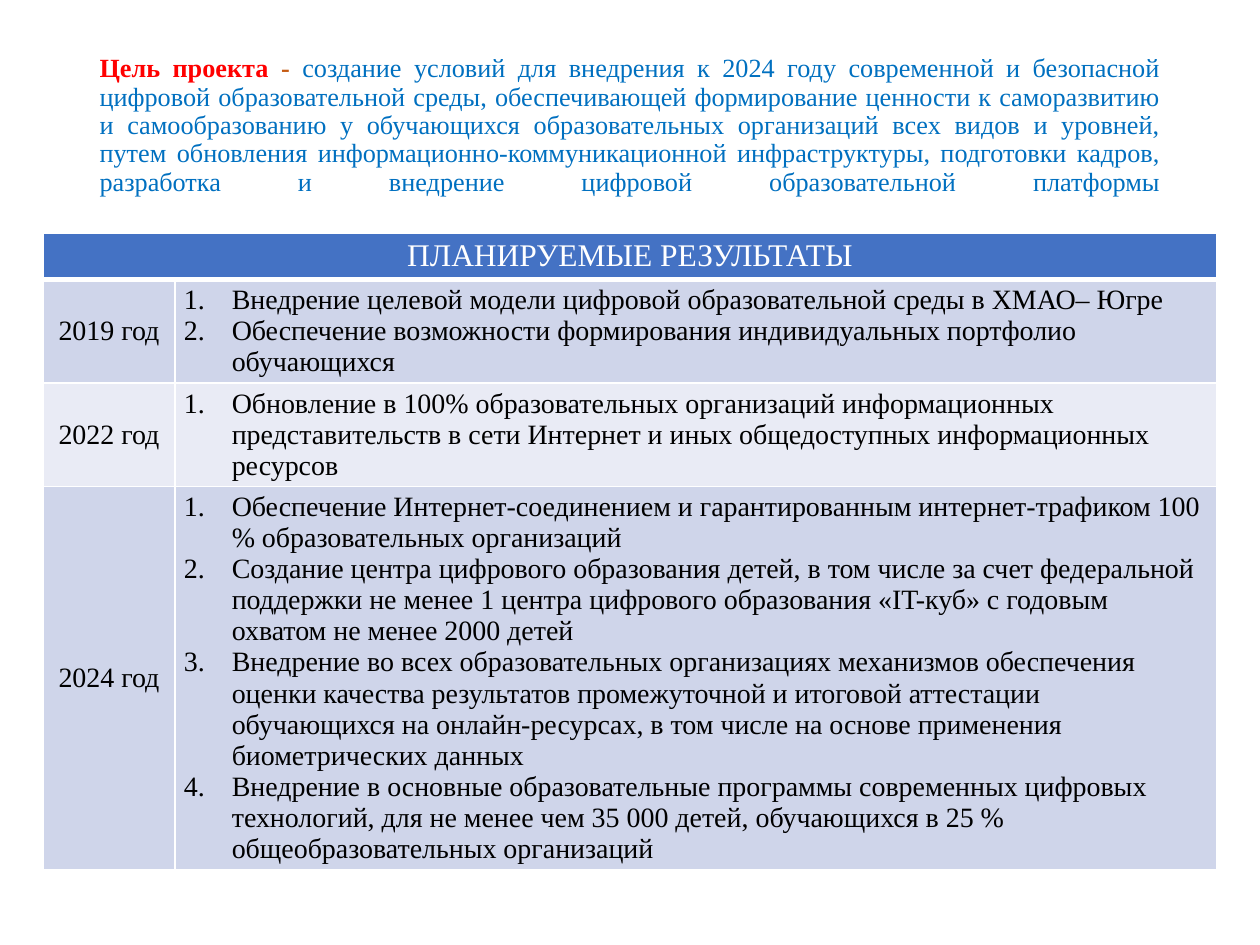
"""Build a slide with the project goal and a table of planned results by year."""
from pptx import Presentation
from pptx.dml.color import RGBColor
from pptx.enum.text import MSO_ANCHOR, MSO_AUTO_SIZE, PP_ALIGN
from pptx.oxml import parse_xml
from pptx.oxml.ns import nsdecls
from pptx.util import Inches, Pt

CENTER, LEFT, JUSTIFY = PP_ALIGN.CENTER, PP_ALIGN.LEFT, PP_ALIGN.JUSTIFY
TOP, MIDDLE = MSO_ANCHOR.TOP, MSO_ANCHOR.MIDDLE
NO_FIT = MSO_AUTO_SIZE.NONE

FONT = "Times New Roman"
RED = RGBColor(0xFF, 0x00, 0x00)
RUST = RGBColor(0xC5, 0x5A, 0x11)
BLUE = RGBColor(0x00, 0x70, 0xC0)
WHITE = RGBColor(0xFF, 0xFF, 0xFF)
BLACK = RGBColor(0x00, 0x00, 0x00)
HEAD = RGBColor(0x44, 0x72, 0xC4)
BANDS = RGBColor(0xCF, 0xD5, 0xEA), RGBColor(0xE9, 0xEB, 0xF5)

GOAL = [
    ("Цель проекта ", RED, True),
    ("- ", RUST, True),
    ("создание условий для внедрения к 2024 году современной и безопасной "
     "цифровой образовательной среды, обеспечивающей формирование ценности "
     "к саморазвитию и самообразованию у обучающихся образовательных "
     "организаций всех видов и уровней, путем обновления "
     "информационно-коммуникационной инфраструктуры, подготовки кадров, "
     "разработка и внедрение цифровой образовательной платформы", BLUE, False),
]
HEADING = "ПЛАНИРУЕМЫЕ РЕЗУЛЬТАТЫ"
RESULTS = [
    ("2019 год", [
        "Внедрение целевой модели цифровой образовательной среды в ХМАО– Югре",
        "Обеспечение возможности формирования индивидуальных портфолио "
        "обучающихся",
    ]),
    ("2022 год", [
        "Обновление в 100% образовательных организаций информационных "
        "представительств в сети Интернет и иных общедоступных "
        "информационных ресурсов",
    ]),
    ("2024 год", [
        "Обеспечение Интернет-соединением и гарантированным "
        "интернет-трафиком 100 % образовательных организаций",
        "Создание центра цифрового образования детей, в том числе за счет "
        "федеральной поддержки не менее 1 центра цифрового образования "
        "«IT-куб» с годовым охватом не менее 2000 детей",
        "Внедрение во всех образовательных организациях механизмов "
        "обеспечения оценки качества результатов промежуточной и итоговой "
        "аттестации обучающихся на онлайн-ресурсах, в том числе на основе "
        "применения биометрических данных",
        "Внедрение в основные образовательные программы современных "
        "цифровых технологий, для не менее чем 35 000 детей, обучающихся "
        "в 25 % общеобразовательных организаций",
    ]),
]
WIDTHS = [1.05, 8.27]
HEIGHTS = [0.37, 0.82, 0.82, 3.02]


def style(font, size, color, bold=False):
    font.name, font.size, font.bold = FONT, Pt(size), bold
    font.color.rgb = color


def number(para):
    props = para._p.get_or_add_pPr()
    props.set("marL", str(Inches(0.38)))
    props.set("indent", str(-Inches(0.38)))
    props.append(parse_xml(f'<a:buFont {nsdecls("a")} typeface="+mj-lt"/>'))
    props.append(parse_xml(
        f'<a:buAutoNum {nsdecls("a")} type="arabicPeriod"/>'))


def border(cell, base):
    props = cell._tc.get_or_add_tcPr()
    for side, width in ("L", 1), ("R", 1), ("T", 1), ("B", base):
        props.append(parse_xml(
            f'<a:ln{side} {nsdecls("a")} w="{Pt(width)}"><a:solidFill>'
            f'<a:srgbClr val="{WHITE}"/></a:solidFill></a:ln{side}>'))


def fill_cell(cell, lines, fill, size=16, color=BLACK, align=CENTER,
              anchor=MIDDLE, listed=False, base=1):
    border(cell, base)
    cell.fill.solid()
    cell.fill.fore_color.rgb = fill
    cell.margin_left = cell.margin_right = Inches(0.07)
    cell.margin_top = cell.margin_bottom = Inches(0.04)
    cell.vertical_anchor = anchor
    cell.text_frame.text = "\n".join(lines)
    for para in cell.text_frame.paragraphs:
        para.alignment = align
        if listed:
            number(para)
        style(para.font, size, color)


def add_goal(slide):
    title = slide.shapes.title
    title.left, title.top = Inches(0.69), Inches(0.4)
    title.width, title.height = Inches(8.62), Inches(1.45)
    frame = title.text_frame
    frame.auto_size, frame.vertical_anchor = NO_FIT, MIDDLE
    para = frame.paragraphs[0]
    para.alignment, para.line_spacing = JUSTIFY, 0.9
    style(para.font, 15, BLUE)
    for text, color, bold in GOAL:
        run = para.add_run()
        run.text = text
        style(run.font, 15, color, bold)
    para.add_line_break()


def add_results(slide):
    table = slide.shapes.add_table(
        len(HEIGHTS), len(WIDTHS), Inches(0.34), Inches(1.85),
        Inches(sum(WIDTHS)), Inches(sum(HEIGHTS))).table
    for col, width in zip(table.columns, WIDTHS):
        col.width = Inches(width)
    for row, height in zip(table.rows, HEIGHTS):
        row.height = Inches(height)
    table.cell(0, 0).merge(table.cell(0, 1))
    fill_cell(table.cell(0, 0), [HEADING], HEAD, 18, WHITE, anchor=TOP, base=3)
    for i, (year, items) in enumerate(RESULTS):
        band = BANDS[i % 2]
        fill_cell(table.cell(i + 1, 0), [year], band)
        fill_cell(table.cell(i + 1, 1), items, band, align=LEFT, anchor=TOP,
                  listed=True)


def main():
    deck = Presentation()
    deck.slide_width, deck.slide_height = Inches(10), Inches(7.5)
    slide = deck.slides.add_slide(deck.slide_layouts[5])
    add_goal(slide)
    add_results(slide)
    deck.save("out.pptx")


if __name__ == "__main__":
    main()
